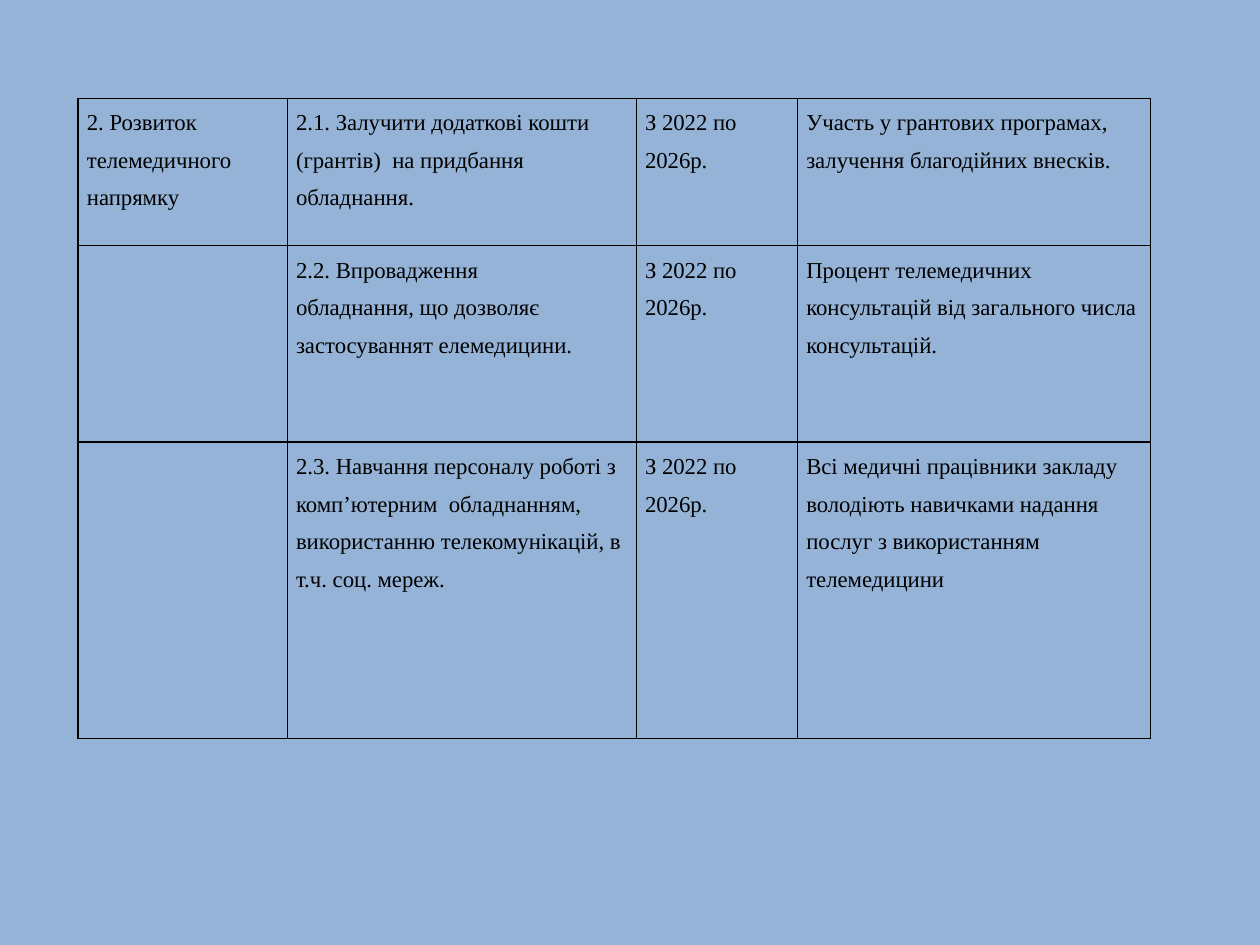
from lxml.etree import SubElement
from pptx import Presentation
from pptx.dml.color import RGBColor
from pptx.oxml.ns import qn
from pptx.util import Inches, Pt

BACKGROUND = "95B3D7"
BLACK = "000000"
FONT = "Times New Roman"
PERIOD = "З 2022 по 2026р."
COLUMNS = [1.66, 2.77, 1.28, 2.8]
HEIGHTS = [1.17, 1.56, 2.35]
ROWS = [
    ["2. Розвиток телемедичного напрямку",
     "2.1. Залучити додаткові кошти (грантів)  на придбання обладнання.",
     PERIOD,
     "Участь у грантових програмах, залучення благодійних внесків."],
    ["",
     "2.2. Впровадження \nобладнання, що дозволяє застосуваннят елемедицини.",
     PERIOD,
     "Процент телемедичних  консультацій від загального числа консультацій."],
    ["",
     "2.3. Навчання персоналу роботі з комп’ютерним  обладнанням, "
     "використанню телекомунікацій, в т.ч. соц. мереж.",
     PERIOD,
     "Всі медичні працівники закладу володіють навичками надання послуг "
     "з використанням телемедицини"],
]


def rgb(color):
    return RGBColor.from_string(color)


def add_text(tf, text, size=13, font=FONT, color=BLACK, spacing=1.5):
    for i, line in enumerate(text.split("\n")):
        p = tf.add_paragraph() if i else tf.paragraphs[0]
        p.line_spacing = spacing
        r = p.add_run()
        r.text = line
        r.font.size = Pt(size)
        r.font.name = font
        r.font.bold = False
        r.font.color.rgb = rgb(color)


def set_borders(cell, color=BLACK, width=1):
    tc_pr = cell._tc.get_or_add_tcPr()
    for i, side in enumerate(("lnL", "lnR", "lnT", "lnB")):
        ln = SubElement(tc_pr, qn(f"a:{side}"), w=str(Pt(width)))
        fill = SubElement(ln, qn("a:solidFill"))
        SubElement(fill, qn("a:srgbClr"), val=color)
        tc_pr.insert(i, ln)


def main():
    prs = Presentation()
    prs.slide_width, prs.slide_height = Inches(10), Inches(7.5)
    s = prs.slides.add_slide(prs.slide_layouts[6])
    s.background.fill.solid()
    s.background.fill.fore_color.rgb = rgb(BACKGROUND)

    table = s.shapes.add_table(
        len(ROWS), len(COLUMNS), Inches(0.62), Inches(0.78),
        Inches(sum(COLUMNS)), Inches(sum(HEIGHTS))).table
    table.first_row = table.horz_banding = False
    for column, width in zip(table.columns, COLUMNS):
        column.width = Inches(width)
    for row, height, texts in zip(table.rows, HEIGHTS, ROWS):
        row.height = Inches(height)
        for cell, text in zip(row.cells, texts):
            cell.margin_left = cell.margin_right = Inches(0.07)
            cell.margin_top = cell.margin_bottom = 0
            cell.fill.background()
            set_borders(cell)
            if text:
                add_text(cell.text_frame, text)

    prs.save("out.pptx")


if __name__ == "__main__":
    main()
